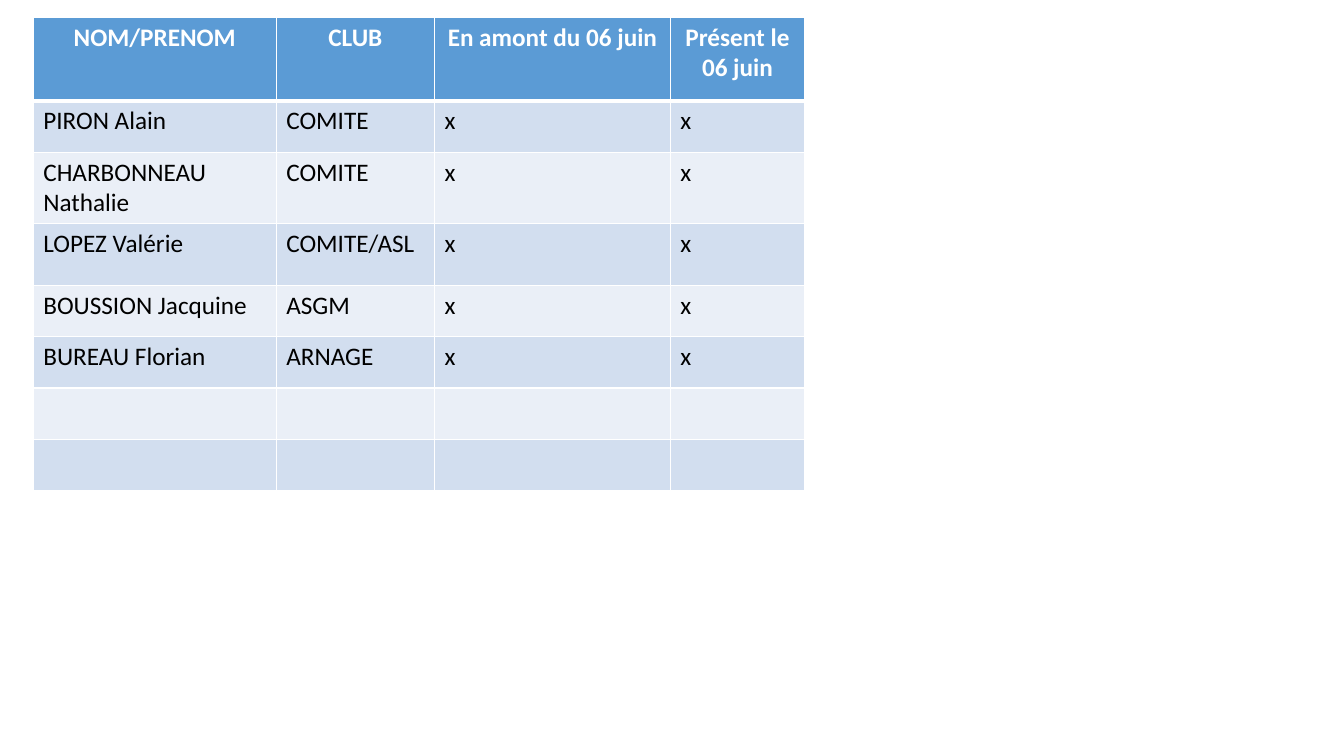
import lxml.etree
import pptx
import pptx.dml.color
import pptx.enum.text
import pptx.oxml.ns
import pptx.util

COLORS = {
    "header": "5B9BD5",
    "odd": "D2DEEF",
    "even": "EAEFF7",
    "white": "FFFFFF",
    "black": "000000",
}
GRID_COLUMNS, GRID_ROWS = 1333, 750
COLUMN_WIDTHS = [241, 157, 234, 133]
ROW_HEIGHTS = [83, 51, 51, 61, 51, 51, 51, 51]
HEADINGS = ["NOM/PRENOM", "CLUB", "En amont du 06 juin", "Présent le 06 juin"]
MEMBERS = [
    ("PIRON Alain", "COMITE"),
    ("CHARBONNEAU Nathalie", "COMITE"),
    ("LOPEZ Valérie", "COMITE/ASL"),
    ("BOUSSION Jacquine", "ASGM"),
    ("BUREAU Florian", "ARNAGE"),
]


def color(name):
    """Return the named colour."""
    return pptx.dml.color.RGBColor.from_string(COLORS[name])


def write(frame, text, *, font="Calibri", size=18, ink="black", bold=False, align="LEFT"):
    """Write one formatted paragraph into a text frame."""
    para = frame.paragraphs[0]
    para.alignment = getattr(pptx.enum.text.PP_ALIGN, align)
    para.font.size = pptx.util.Pt(size)
    if text:
        span = para.add_run()
        span.text = text
        span.font.name = font
        span.font.size = pptx.util.Pt(size)
        span.font.bold = bold
        span.font.color.rgb = color(ink)


class AttendanceSlide:
    """Hold the table style and the current slide."""

    def __init__(self, deck):
        """Add a blank page and measure its grid."""
        self.page = deck.slides.add_slide(deck.slide_layouts[6])
        self.column = deck.slide_width / GRID_COLUMNS
        self.row = deck.slide_height / GRID_ROWS

    def across(self, columns):
        """Convert grid columns to a length."""
        return pptx.util.Emu(round(columns * self.column))

    def down(self, rows):
        """Convert grid rows to a length."""
        return pptx.util.Emu(round(rows * self.row))

    def border(self, cell, side, width):
        """Draw one white edge of a cell."""
        properties = cell._tc.get_or_add_tcPr()
        line = lxml.etree.SubElement(
            properties, pptx.oxml.ns.qn(f"a:ln{side}"), w=str(pptx.util.Pt(width))
        )
        fill = lxml.etree.SubElement(line, pptx.oxml.ns.qn("a:solidFill"))
        lxml.etree.SubElement(fill, pptx.oxml.ns.qn("a:srgbClr"), val=COLORS["white"])

    def cell(self, cell, text, row):
        """Style and fill one cell according to its row."""
        widths = {"L": 1, "R": 1, "T": 3 if row == 1 else 1, "B": 3 if row == 0 else 1}
        for side, width in widths.items():
            self.border(cell, side, width)
        cell.fill.solid()
        if row == 0:
            cell.fill.fore_color.rgb = color("header")
            write(cell.text_frame, text, ink="white", bold=True, align="CENTER")
        else:
            cell.fill.fore_color.rgb = color("odd" if row % 2 else "even")
            write(cell.text_frame, text)

    def table(self, left, top, widths, heights, content):
        """Add a table whose columns and rows follow the grid."""
        table = self.page.shapes.add_table(
            len(heights), len(widths), self.across(left), self.down(top),
            self.across(sum(widths)), self.down(sum(heights)),
        ).table
        for column, width in zip(table.columns, widths):
            column.width = self.across(width)
        for index, (row, height) in enumerate(zip(table.rows, heights)):
            row.height = self.down(height)
            for cell, text in zip(row.cells, content[index]):
                self.cell(cell, text, index)


def main():
    """Build and save the attendance list."""
    deck = pptx.Presentation()
    deck.slide_width = pptx.util.Inches(13.33)
    deck.slide_height = pptx.util.Inches(7.5)
    content = [HEADINGS] + [[name, club, "x", "x"] for name, club in MEMBERS]
    content += [[""] * len(HEADINGS)] * (len(ROW_HEIGHTS) - len(content))
    AttendanceSlide(deck).table(33, 17, COLUMN_WIDTHS, ROW_HEIGHTS, content)
    deck.save("out.pptx")


if __name__ == "__main__":
    main()
